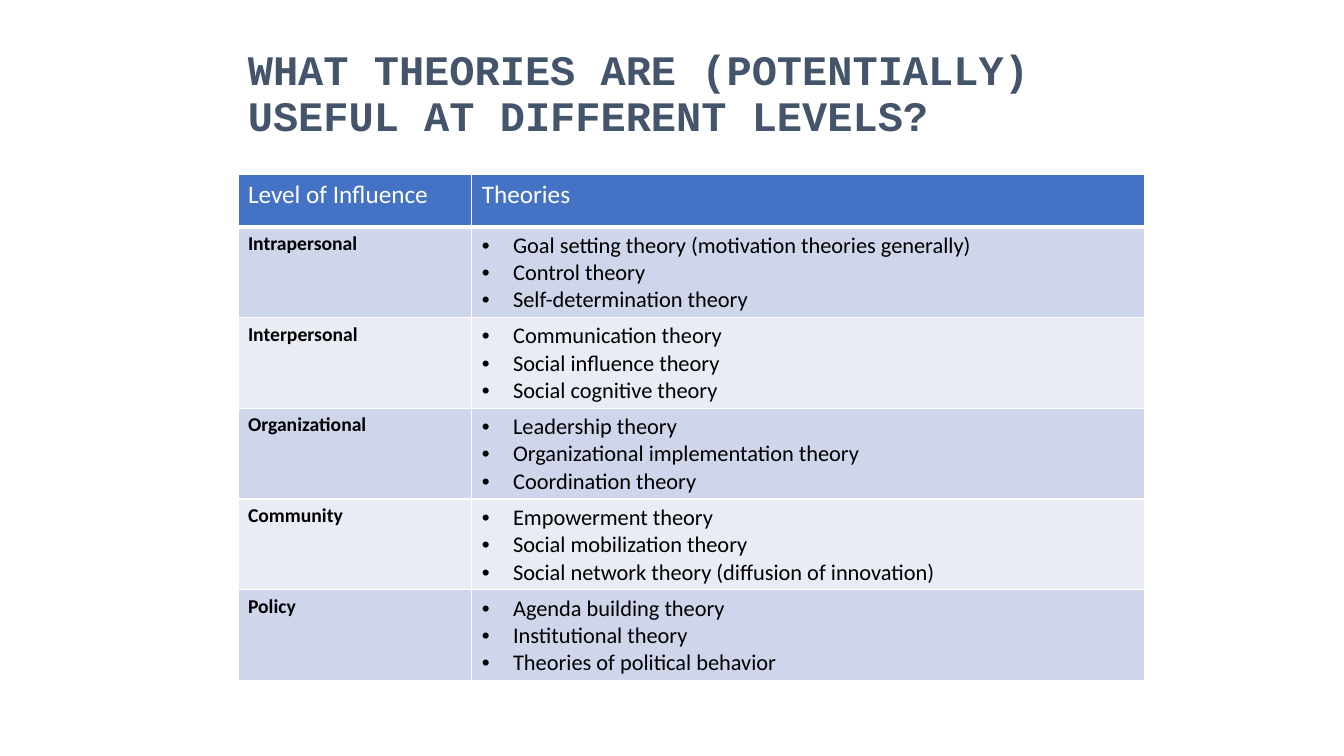
from lxml.etree import SubElement
from pptx import Presentation
from pptx.dml.color import RGBColor
from pptx.enum.text import MSO_ANCHOR
from pptx.oxml.ns import qn
from pptx.util import Inches, Pt

COLORS = {
    "title": "44546A",
    "header": "4472C4",
    "band_dark": "CFD5EA",
    "band_light": "E9EBF5",
    "white": "FFFFFF",
    "black": "000000",
}
TITLE = "WHAT THEORIES ARE (POTENTIALLY) USEFUL AT DIFFERENT LEVELS?"
HEADINGS = ("Level of Influence", "Theories")
THEORIES = {
    "Intrapersonal": [
        "Goal setting theory (motivation theories generally)",
        "Control theory",
        "Self-determination theory",
    ],
    "Interpersonal": [
        "Communication theory",
        "Social influence theory",
        "Social cognitive theory",
    ],
    "Organizational": [
        "Leadership theory",
        "Organizational implementation theory",
        "Coordination theory",
    ],
    "Community": [
        "Empowerment theory",
        "Social mobilization theory",
        "Social network theory (diffusion of innovation)",
    ],
    "Policy": [
        "Agenda building theory",
        "Institutional theory",
        "Theories of political behavior",
    ],
}
COLUMN_WIDTHS = (2.32, 6.67)
HEADER_HEIGHT, LEVEL_HEIGHT = 0.52, 0.88
BULLET_INDENT = Inches(0.31)


def add_bullet(paragraph):
    properties = paragraph._p.get_or_add_pPr()
    properties.set("marL", str(BULLET_INDENT))
    properties.set("indent", str(-BULLET_INDENT))
    SubElement(properties, qn("a:buFont"), typeface="Arial")
    SubElement(properties, qn("a:buChar"), char="•")


def write(frame, lines, size, color="black", font="Calibri", bold=False,
          bullets=False, spacing=None):
    """Fill a text frame with one paragraph per line."""
    for index, line in enumerate(lines):
        paragraph = frame.add_paragraph() if index else frame.paragraphs[0]
        if spacing:
            paragraph.line_spacing = spacing
        if bullets:
            add_bullet(paragraph)
        run = paragraph.add_run()
        run.text = line
        run.font.name = font
        run.font.size = Pt(size)
        run.font.bold = bold
        run.font.color.rgb = RGBColor.from_string(COLORS[color])


def style_cell(cell, fill, bottom=1):
    """Give a cell white borders and a solid fill."""
    properties = cell._tc.get_or_add_tcPr()
    for side, width in (("L", 1), ("R", 1), ("T", 1), ("B", bottom)):
        border = SubElement(properties, qn(f"a:ln{side}"), w=str(Pt(width)))
        solid = SubElement(border, qn("a:solidFill"))
        SubElement(solid, qn("a:srgbClr"), val=COLORS["white"])
    cell.fill.solid()
    cell.fill.fore_color.rgb = RGBColor.from_string(COLORS[fill])


def add_title(slide, left, top, width, height):
    title = slide.shapes.add_textbox(
        Inches(left), Inches(top), Inches(width), Inches(height))
    frame = title.text_frame
    frame.word_wrap = True
    frame.vertical_anchor = MSO_ANCHOR.BOTTOM
    write(frame, [TITLE], 30, color="title", font="Courier New", bold=True,
          spacing=0.9)


def add_theory_table(slide, left, top):
    height = HEADER_HEIGHT + LEVEL_HEIGHT * len(THEORIES)
    table = slide.shapes.add_table(
        len(THEORIES) + 1, len(HEADINGS), Inches(left), Inches(top),
        Inches(sum(COLUMN_WIDTHS)), Inches(height)).table
    for column, width in zip(table.columns, COLUMN_WIDTHS):
        column.width = Inches(width)

    table.rows[0].height = Inches(HEADER_HEIGHT)
    for cell, heading in zip(table.rows[0].cells, HEADINGS):
        style_cell(cell, "header", bottom=3)
        write(cell.text_frame, [heading], 18, color="white")

    for row, (level, theories) in enumerate(THEORIES.items(), start=1):
        table.rows[row].height = Inches(LEVEL_HEIGHT)
        level_cell, theory_cell = table.rows[row].cells
        for cell in (level_cell, theory_cell):
            style_cell(cell, "band_dark" if row % 2 else "band_light")
        write(level_cell.text_frame, [level], 14, bold=True)
        write(theory_cell.text_frame, theories, 16, bullets=True)


def main():
    deck = Presentation()
    deck.slide_width, deck.slide_height = Inches(13.33), Inches(7.5)
    slide = deck.slides.add_slide(deck.slide_layouts[6])
    add_title(slide, 2.36, 0.36, 9.3, 1.08)
    add_theory_table(slide, 2.36, 1.73)
    deck.save("out.pptx")


if __name__ == "__main__":
    main()
